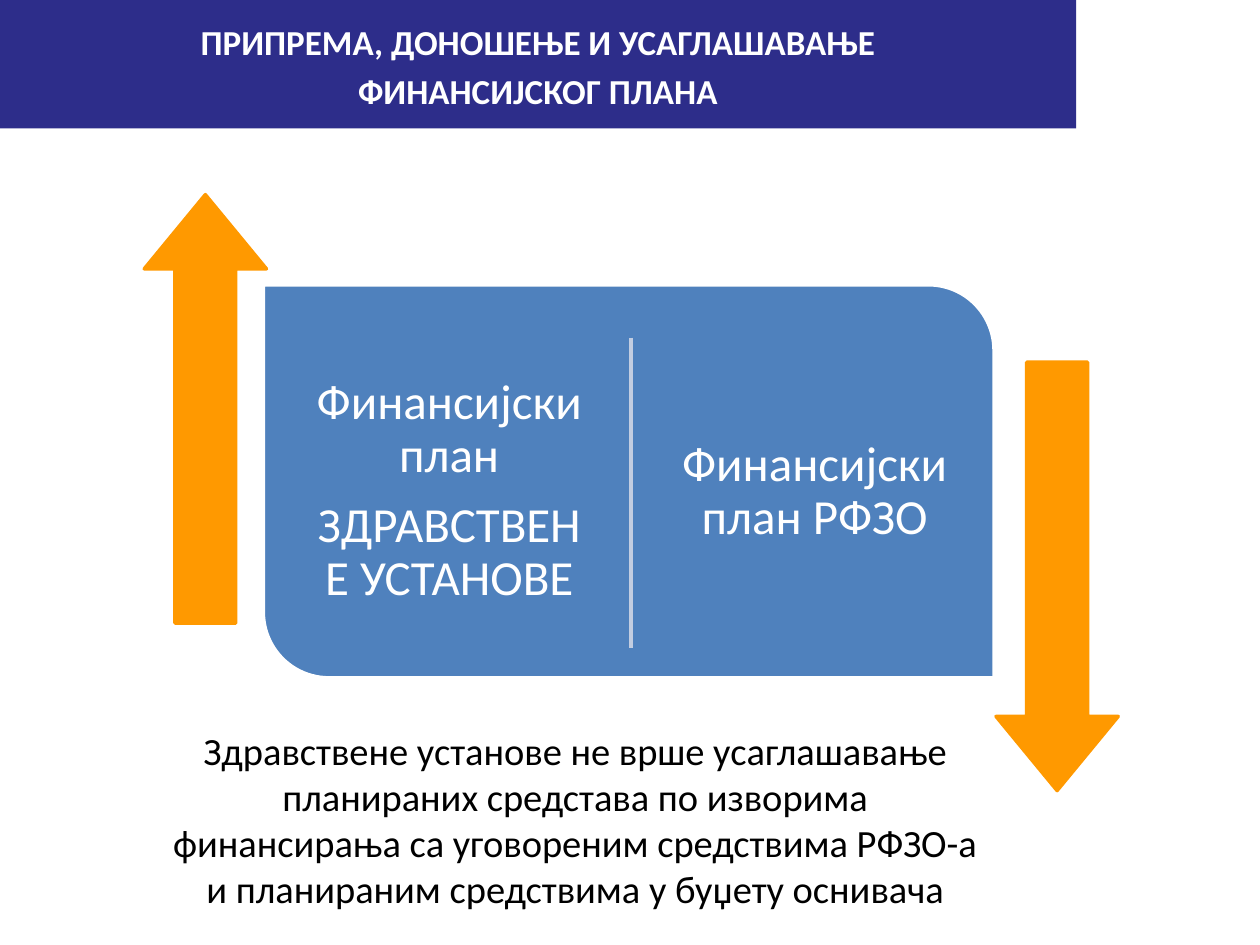
"""Build the slide on preparing and aligning the financial plan."""
from dataclasses import dataclass

from lxml.etree import SubElement
from pptx import Presentation
from pptx.dml.color import RGBColor
from pptx.enum.shapes import MSO_CONNECTOR, MSO_SHAPE
from pptx.enum.text import MSO_ANCHOR, MSO_AUTO_SIZE, PP_ALIGN
from pptx.oxml.ns import qn
from pptx.util import Inches, Pt

NAVY = RGBColor(0x2D, 0x2D, 0x8A)
BLUE = RGBColor(0x4F, 0x81, 0xBD)
PALE = RGBColor(0xC2, 0xCD, 0xE1)
ORANGE = RGBColor(0xFF, 0x99, 0x00)
WHITE = RGBColor(0xFF, 0xFF, 0xFF)
BLACK = RGBColor(0x00, 0x00, 0x00)

WIDTH, HEIGHT = Inches(10), Inches(7.5)
COLUMN, ROW = WIDTH / 100, HEIGHT / 75


@dataclass
class Area:
    """Place on the grid, in columns and rows."""
    left: float
    top: float
    width: float
    height: float

    def lengths(self) -> tuple:
        return (int(self.left * COLUMN), int(self.top * ROW),
                int(self.width * COLUMN), int(self.height * ROW))


@dataclass
class Label:
    """Text box with its paragraphs and look."""
    area: Area
    lines: list
    size: float
    color: RGBColor
    inset: float
    anchor: MSO_ANCHOR
    spacing: dict


@dataclass
class Arrow:
    """Turned block arrow."""
    area: Area
    rotation: float


PLAN_SPACING = {"line_spacing": 0.9, "space_after": Pt(9.8)}
PLAN_LABELS = [
    Label(Area(left, 25.8, 25.1, 26.5), lines, 28, WHITE, 0.12, MSO_ANCHOR.MIDDLE, PLAN_SPACING)
    for left, lines in (
        (23.1, ["Финансијски план", "ЗДРАВСТВЕНЕ УСТАНОВЕ"]),
        (52.1, ["Финансијски план РФЗО"]),
    )
]
NOTE = Label(
    Area(12.2, 57.2, 66.9, 15.8),
    ["Здравствене установе не врше усаглашавање планираних средстава по изворима "
     "финансирања са уговореним средствима РФЗО-а и планираним средствима у буџету оснивача"],
    22, BLACK, 0.1, MSO_ANCHOR.TOP, {})
ARROWS = [Arrow(Area(-0.7, 27.6, 34, 9.7), 270), Arrow(Area(66.9, 40.9, 34, 9.7), 90)]


def write(frame, lines: list, font: dict, color: RGBColor, spacing: dict) -> None:
    """Fill a text frame with centred paragraphs."""
    frame.word_wrap = True
    for index, line in enumerate(lines):
        para = frame.paragraphs[0] if index == 0 else frame.add_paragraph()
        span = para.add_run()
        span.text = line
        for name, value in {"alignment": PP_ALIGN.CENTER, **spacing}.items():
            setattr(para, name, value)
        for name, value in {"name": "Calibri", **font}.items():
            setattr(span.font, name, value)
        span.font.color.rgb = color


def add_title(page) -> None:
    """Turn the title placeholder into the heading band."""
    title = page.shapes.title
    title.left, title.top, title.width, title.height = Area(0, 0, 85.4, 10.2).lengths()
    title.fill.solid()
    title.fill.fore_color.rgb = NAVY
    frame = title.text_frame
    frame.auto_size = MSO_AUTO_SIZE.NONE
    frame.vertical_anchor = MSO_ANCHOR.MIDDLE
    frame.margin_top = Inches(0.08)
    write(frame, ["ПРИПРЕМА, ДОНОШЕЊЕ И УСАГЛАШАВАЊЕ", "ФИНАНСИЈСКОГ ПЛАНА"],
          {"size": Pt(20), "bold": True}, WHITE, {})
    frame.paragraphs[1].space_before = Pt(4)


def add_block(page, kind: MSO_SHAPE, area: Area, adjustments: tuple,
              fill: RGBColor, line: RGBColor):
    """Add a filled preset shape with a two-point outline."""
    block = page.shapes.add_shape(kind, *area.lengths())
    block.shadow.inherit = False
    for index, value in enumerate(adjustments):
        block.adjustments[index] = value
    block.fill.solid()
    block.fill.fore_color.rgb = fill
    block.line.color.rgb = line
    block.line.width = Pt(2)
    return block


def add_divider(page, column: float, top: float, bottom: float) -> None:
    """Add the vertical line between the two plans."""
    left = int(column * COLUMN)
    divider = page.shapes.add_connector(
        MSO_CONNECTOR.STRAIGHT, left, int(top * ROW), left, int(bottom * ROW))
    divider.line.color.rgb = PALE
    divider.line.width = Pt(2)
    SubElement(divider._element.spPr, qn("a:effectLst"))


def add_label(page, label: Label) -> None:
    """Add a text box."""
    box = page.shapes.add_textbox(*label.area.lengths())
    frame = box.text_frame
    frame.vertical_anchor = label.anchor
    frame.margin_left = frame.margin_right = Inches(label.inset)
    frame.margin_top = frame.margin_bottom = Inches(min(label.inset, 0.12) if label.spacing else 0.05)
    write(frame, label.lines, {"size": Pt(label.size)}, label.color, label.spacing)


def add_arrow(page, arrow: Arrow) -> None:
    """Add a turned arrow with rounded outline corners."""
    block = add_block(page, MSO_SHAPE.RIGHT_ARROW, arrow.area, (0.498, 0.607), ORANGE, ORANGE)
    block.rotation = arrow.rotation
    SubElement(block.line._get_or_add_ln(), qn("a:round"))


def main() -> None:
    """Build and save the deck."""
    deck = Presentation()
    deck.slide_width, deck.slide_height = WIDTH, HEIGHT
    page = deck.slides.add_slide(deck.slide_layouts[5])
    add_title(page)
    add_block(page, MSO_SHAPE.ROUND_2_DIAG_RECTANGLE, Area(20.9, 22.6, 58, 31.2),
              (0, 0.167), BLUE, WHITE)
    add_divider(page, 50.1, 26.8, 51.4)
    for label in PLAN_LABELS:
        add_label(page, label)
    for arrow in ARROWS:
        add_arrow(page, arrow)
    add_label(page, NOTE)
    deck.save("out.pptx")


if __name__ == "__main__":
    main()
